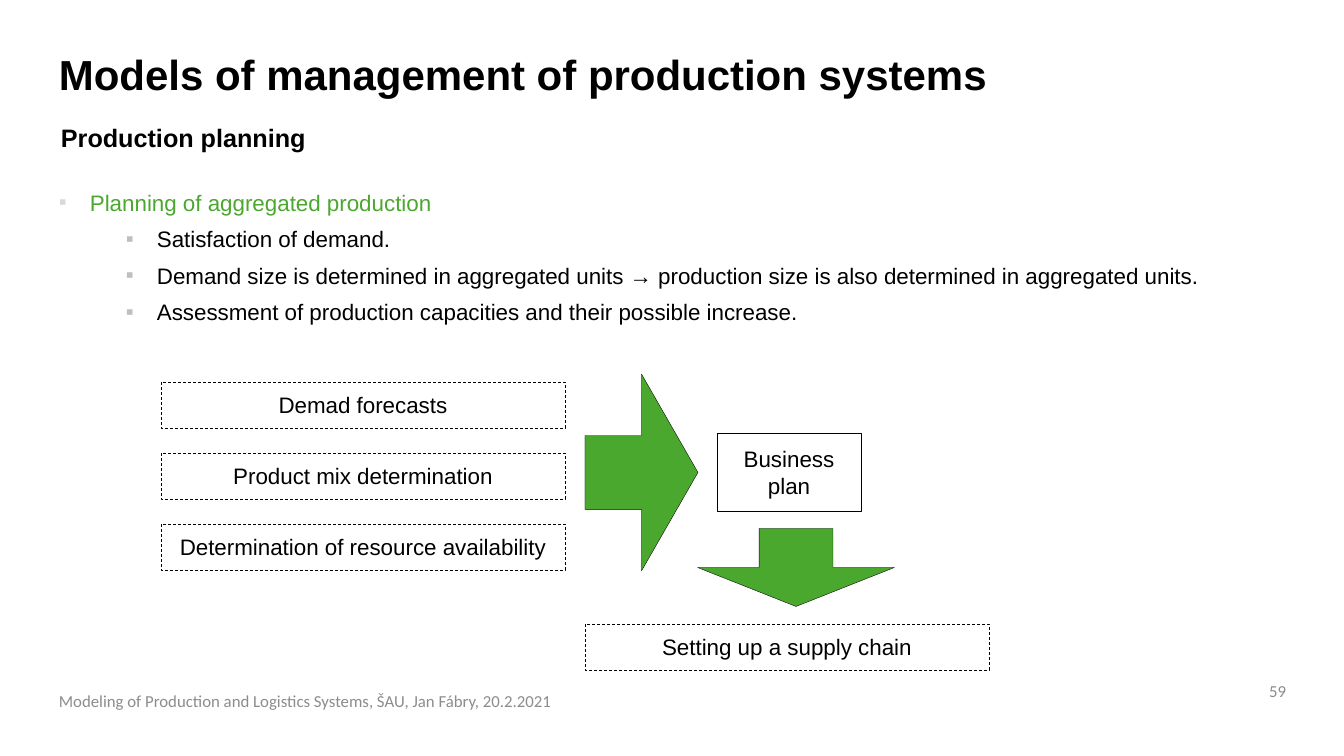
from lxml.etree import SubElement
from pptx import Presentation
from pptx.dml.color import RGBColor
from pptx.enum.dml import MSO_LINE
from pptx.enum.shapes import MSO_SHAPE
from pptx.enum.text import MSO_ANCHOR, PP_ALIGN
from pptx.oxml.ns import qn
from pptx.util import Pt

PX = 914400 / 100.8
THEME = {
    "black": RGBColor.from_string("000000"),
    "white": RGBColor.from_string("FFFFFF"),
    "green": RGBColor.from_string("4BA82E"),
    "grey": RGBColor.from_string("8C8C8C"),
    "top_bullet": "D9D9D9",
    "sub_bullet": "BFBFBF",
    "font": "Arial",
    "footer_font": "Calibri",
    "title": 30,
    "subtitle": 18,
    "body": 16,
    "footer": 12,
}

presentation = Presentation()
presentation.slide_width = round(1344 * PX)
presentation.slide_height = round(756 * PX)
slide = presentation.slides.add_slide(presentation.slide_layouts[6])


def style(paragraph, text, size, color="black", font="font", bold=False):
    paragraph.text = text
    paragraph.font.name = THEME[font]
    paragraph.font.size = Pt(THEME[size])
    paragraph.font.color.rgb = THEME[color]
    paragraph.font.bold = bold


def add_shape(kind, box, fill, line_width):
    shape = slide.shapes.add_shape(kind, *[round(length * PX) for length in box])
    shape.shadow.inherit = False
    shape.fill.solid()
    shape.fill.fore_color.rgb = THEME[fill]
    shape.line.color.rgb = THEME["black"]
    shape.line.width = Pt(line_width)
    return shape


bullets = [
    (0, "Planning of aggregated production"),
    (1, "Satisfaction of demand."),
    (1, "Demand size is determined in aggregated units → production size is also determined in aggregated units."),
    (1, "Assessment of production capacities and their possible increase."),
]
body = slide.shapes.add_textbox(*[round(length * PX) for length in (49, 181, 1244, 223)])
body.text_frame.word_wrap = True
for index, (level, text) in enumerate(bullets):
    paragraph = body.text_frame.paragraphs[0] if index == 0 else body.text_frame.add_paragraph()
    paragraph.level = level
    paragraph.line_spacing = 1.1
    if level:
        paragraph.space_before = Pt(5)
    properties = paragraph._p.get_or_add_pPr()
    properties.set("marL", str(round((98 if level else 31) * PX)))
    properties.set("indent", str(round(-31 * PX)))
    bullet_color = SubElement(properties, qn("a:buClr"))
    SubElement(bullet_color, qn("a:srgbClr"), val=THEME["sub_bullet" if level else "top_bullet"])
    SubElement(properties, qn("a:buFont"), typeface=THEME["font"])
    SubElement(properties, qn("a:buChar"), char="▪")
    style(paragraph, text, "body", "black" if level else "green")

captions = [
    ((49, 49, 1019, 57), "Models of management of production systems",
     "title", "black", "font", True, PP_ALIGN.LEFT),
    ((51, 117, 1019, 40), "Production planning",
     "subtitle", "black", "font", True, PP_ALIGN.LEFT),
    ((49, 681, 723, 40), "Modeling of Production and Logistics Systems, ŠAU, Jan Fábry, 20.2.2021",
     "footer", "grey", "footer_font", False, PP_ALIGN.LEFT),
    ((1216, 674, 80, 33), "59",
     "footer", "grey", "footer_font", False, PP_ALIGN.RIGHT),
]
for box, text, size, color, font, bold, alignment in captions:
    caption = slide.shapes.add_textbox(*[round(length * PX) for length in box])
    frame = caption.text_frame
    frame.word_wrap = True
    frame.vertical_anchor = MSO_ANCHOR.MIDDLE if size == "footer" else MSO_ANCHOR.TOP
    paragraph = frame.paragraphs[0]
    paragraph.alignment = alignment
    if size == "title":
        paragraph.line_spacing = 0.9
    style(paragraph, text, size, color, font, bold)

steps = [
    ((161, 382, 404, 46), "Demad forecasts", MSO_LINE.DASH),
    ((161, 453, 404, 46), "Product mix determination", MSO_LINE.DASH),
    ((161, 524, 404, 46), "Determination of resource availability", MSO_LINE.DASH),
    ((717, 433, 144, 78), "Business plan", MSO_LINE.SOLID),
    ((585, 624, 404, 46), "Setting up a supply chain", MSO_LINE.DASH),
]
for box, text, dash in steps:
    step = add_shape(MSO_SHAPE.RECTANGLE, box, "white", 0.5)
    step.line.dash_style = dash
    step.text_frame.word_wrap = True
    step.text_frame.vertical_anchor = MSO_ANCHOR.MIDDLE
    paragraph = step.text_frame.paragraphs[0]
    paragraph.alignment = PP_ALIGN.CENTER
    style(paragraph, text, "body")

for box, rotation in [((585, 374, 113, 197), 0), ((757, 469, 78, 197), 90)]:
    arrow = add_shape(MSO_SHAPE.RIGHT_ARROW, box, "green", 0.25)
    arrow.rotation = rotation
    arrow.adjustments[0] = 0.375
    arrow.adjustments[1] = 0.5

presentation.save("out.pptx")
